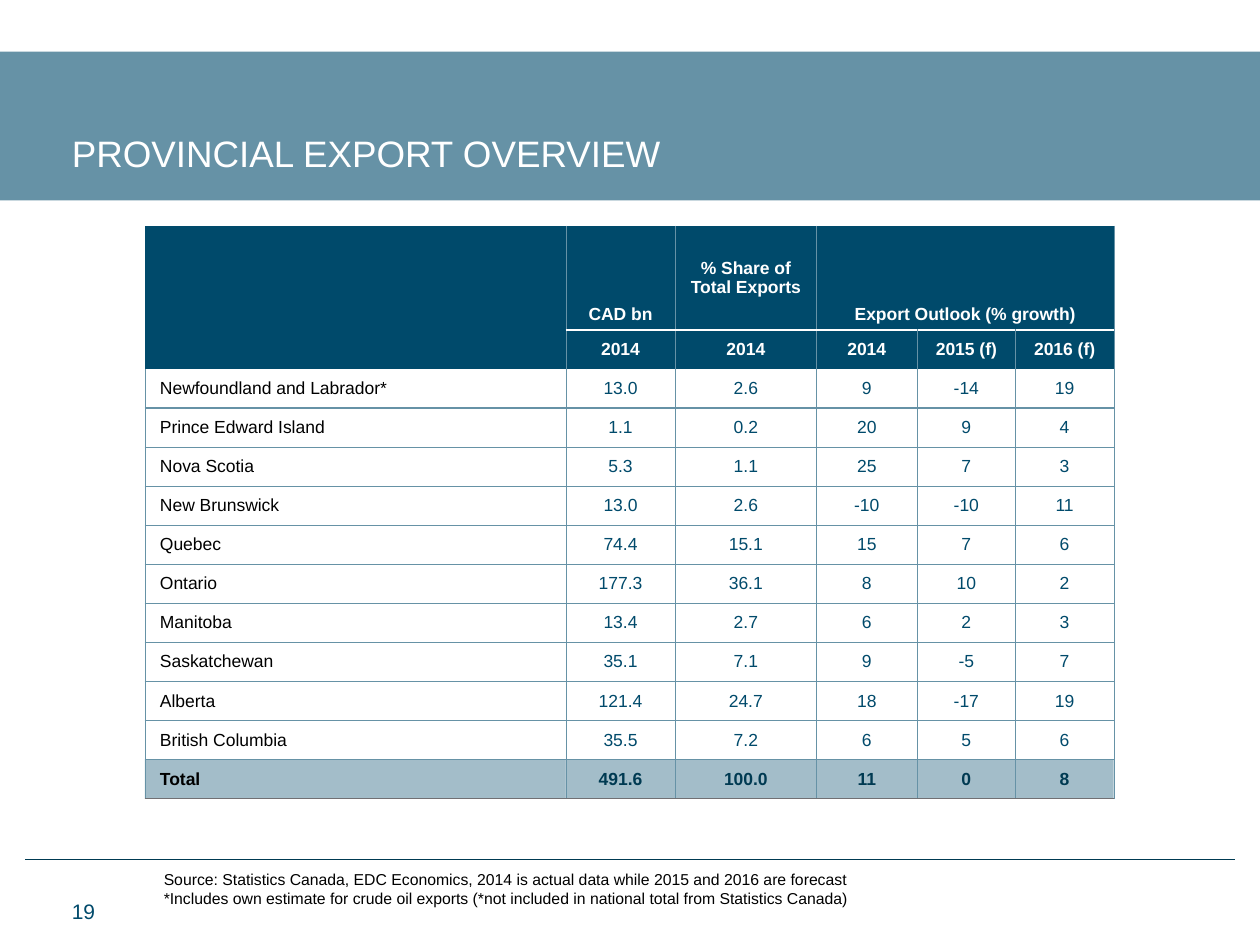
from lxml.etree import SubElement
from pptx import Presentation
from pptx.dml.color import RGBColor
from pptx.enum.shapes import MSO_CONNECTOR, MSO_SHAPE
from pptx.enum.text import MSO_ANCHOR, PP_ALIGN
from pptx.oxml.ns import qn
from pptx.util import Inches, Pt

NAVY = RGBColor(0x00, 0x4A, 0x6B)
DARK = RGBColor(0x00, 0x3A, 0x52)
STEEL = RGBColor(0x66, 0x92, 0xA6)
GRAY = RGBColor(0x71, 0x70, 0x73)
WHITE = RGBColor(0xFF, 0xFF, 0xFF)
BLACK = RGBColor(0, 0, 0)

PLAIN_STYLE = "{2D5ABB26-0587-4C30-8999-92F81FD0307C}"
WIDTHS = [3.34, 0.87, 1.12, 0.8, 0.78, 0.78]
HEIGHTS = [0.83] + [0.31] * 12
ROWS = [
    ["", "CAD bn", "% Share of Total Exports", "Export Outlook (% growth)", "", ""],
    ["", "2014", "2014", "2014", "2015 (f)", "2016 (f)"],
    ["Newfoundland and Labrador*", "13.0", "2.6", "9", "-14", "19"],
    ["Prince Edward Island", "1.1", "0.2", "20", "9", "4"],
    ["Nova Scotia", "5.3", "1.1", "25", "7", "3"],
    ["New Brunswick", "13.0", "2.6", "-10", "-10", "11"],
    ["Quebec", "74.4", "15.1", "15", "7", "6"],
    ["Ontario", "177.3", "36.1", "8", "10", "2"],
    ["Manitoba", "13.4", "2.7", "6", "2", "3"],
    ["Saskatchewan", "35.1", "7.1", "9", "-5", "7"],
    ["Alberta", "121.4", "24.7", "18", "-17", "19"],
    ["British Columbia", "35.5", "7.2", "6", "5", "6"],
    ["Total", "491.6", "100.0", "11", "0", "8"],
]
LAST = len(ROWS) - 1
NOTE = ("Source: Statistics Canada, EDC Economics, 2014 is actual data while 2015 and 2016 are forecast\v"
        "*Includes own estimate for crude oil exports (*not included in national total from Statistics Canada)")


def set_all(item, values):
    for name, value in values.items():
        setattr(item, name, value)


def margins(left, top, right, bottom):
    return {"margin_left": Inches(left), "margin_top": Inches(top),
            "margin_right": Inches(right), "margin_bottom": Inches(bottom)}


def write(frame, text, size, color, bold=False, align=PP_ALIGN.LEFT):
    frame.text = text
    para = frame.paragraphs[0]
    para.alignment = align
    for run in para.runs:
        set_all(run.font, {"name": "Arial", "size": Pt(size), "bold": bold})
        run.font.color.rgb = color


def add_band(slide):
    band = slide.shapes.add_shape(MSO_SHAPE.RECTANGLE, 0, Inches(0.41), Inches(10), Inches(1.18))
    band.shadow.inherit = False
    band.fill.solid()
    band.fill.fore_color.rgb = STEEL
    band.line.fill.background()


def add_rule(slide):
    rule = slide.shapes.add_connector(
        MSO_CONNECTOR.STRAIGHT, Inches(0.2), Inches(6.82), Inches(9.8), Inches(6.82))
    rule.line.color.rgb = DARK
    rule.line.width = Pt(0.5)
    SubElement(rule.element.spPr, qn("a:effectLst"))


def add_title(slide, text):
    title = slide.shapes.title
    set_all(title, {"left": Inches(0.57), "top": Inches(1.04),
                    "width": Inches(9), "height": Inches(0.52)})
    set_all(title.text_frame, {**margins(0, 0, 0, 0), "vertical_anchor": MSO_ANCHOR.TOP})
    write(title.text_frame, text, 21, WHITE)
    # Bring the title in front of the band
    title.element.getparent().append(title.element)


def add_text(slide, box, text, size, color, pads, anchor):
    frame = slide.shapes.add_textbox(*map(Inches, box)).text_frame
    set_all(frame, {**margins(*pads), "word_wrap": True, "vertical_anchor": anchor})
    write(frame, text, size, color)


def set_edges(cell, edges):
    props = cell._tc.get_or_add_tcPr()
    for side in "LRTB":
        color, width = edges.get(side, (None, 0))
        line = SubElement(props, qn("a:ln" + side), w=str(Pt(width)))
        if color is None:
            SubElement(line, qn("a:noFill"))
        else:
            fill = SubElement(line, qn("a:solidFill"))
            SubElement(fill, qn("a:srgbClr"), val=str(color))


def get_edges(row, col):
    thin, thick = (STEEL, 0.25), (STEEL, 1)
    if row > 1:
        edges = {"L": thin, "R": thin, "B": (GRAY, 1) if row == LAST else thick}
        if row > 2:
            edges["T"] = thick
        return edges
    if col == 0:
        return {"R": thin}
    return {"L": thin, "R": thin, "TB"[row == 0]: (WHITE, 1)}


def fill_cell(cell, row, col, text):
    head, total = row < 2, row == LAST
    set_edges(cell, get_edges(row, col))
    if head or total:
        cell.fill.solid()
        cell.fill.fore_color.rgb = NAVY if head else STEEL
    else:
        cell.fill.background()
    if total:
        tint = cell._tc.tcPr.find(qn("a:solidFill"))[0]
        SubElement(tint, qn("a:alpha"), val="60000")
    side = 0.12 if head or col == 0 else 0
    edge = 0.05 if row == 0 else 0
    low = row == 0 and col != 2
    set_all(cell, {**margins(side, edge, side, edge),
                   "vertical_anchor": MSO_ANCHOR.BOTTOM if low else MSO_ANCHOR.MIDDLE})
    if head:
        color = WHITE
    elif col == 0:
        color = BLACK
    else:
        color = DARK if total else NAVY
    align = PP_ALIGN.CENTER if head or col else PP_ALIGN.LEFT
    write(cell.text_frame, text, 10, color, head or total, align)


def add_grid(slide):
    frame = slide.shapes.add_table(
        len(ROWS), len(WIDTHS), Inches(1.15), Inches(1.79),
        Inches(sum(WIDTHS)), Inches(sum(HEIGHTS)))
    table = frame.table
    set_all(table, {"first_row": False, "horz_banding": False})
    frame.element.xpath(".//a:tableStyleId")[0].text = PLAIN_STYLE
    for col, width in zip(table.columns, WIDTHS):
        col.width = Inches(width)
    for line, height in zip(table.rows, HEIGHTS):
        line.height = Inches(height)
    for row, texts in enumerate(ROWS):
        for col, text in enumerate(texts):
            fill_cell(table.cell(row, col), row, col, text)
    table.cell(0, 3).merge(table.cell(0, 5))


def main():
    deck = Presentation()
    set_all(deck, {"slide_width": Inches(10), "slide_height": Inches(7.5)})
    slide = deck.slides.add_slide(deck.slide_layouts[5])
    # Frame of the page
    add_band(slide)
    add_rule(slide)
    add_text(slide, (0.57, 7.03, 1.86, 0.4), "19", 12, NAVY,
             (0, 0.05, 0.1, 0.05), MSO_ANCHOR.MIDDLE)
    # Content
    add_grid(slide)
    add_title(slide, "PROVINCIAL EXPORT OVERVIEW")
    add_text(slide, (1.3, 6.8, 7.54, 0.6), NOTE, 9, BLACK,
             (0, 0.1, 0, 0.1), MSO_ANCHOR.TOP)
    deck.save("out.pptx")


if __name__ == "__main__":
    main()
